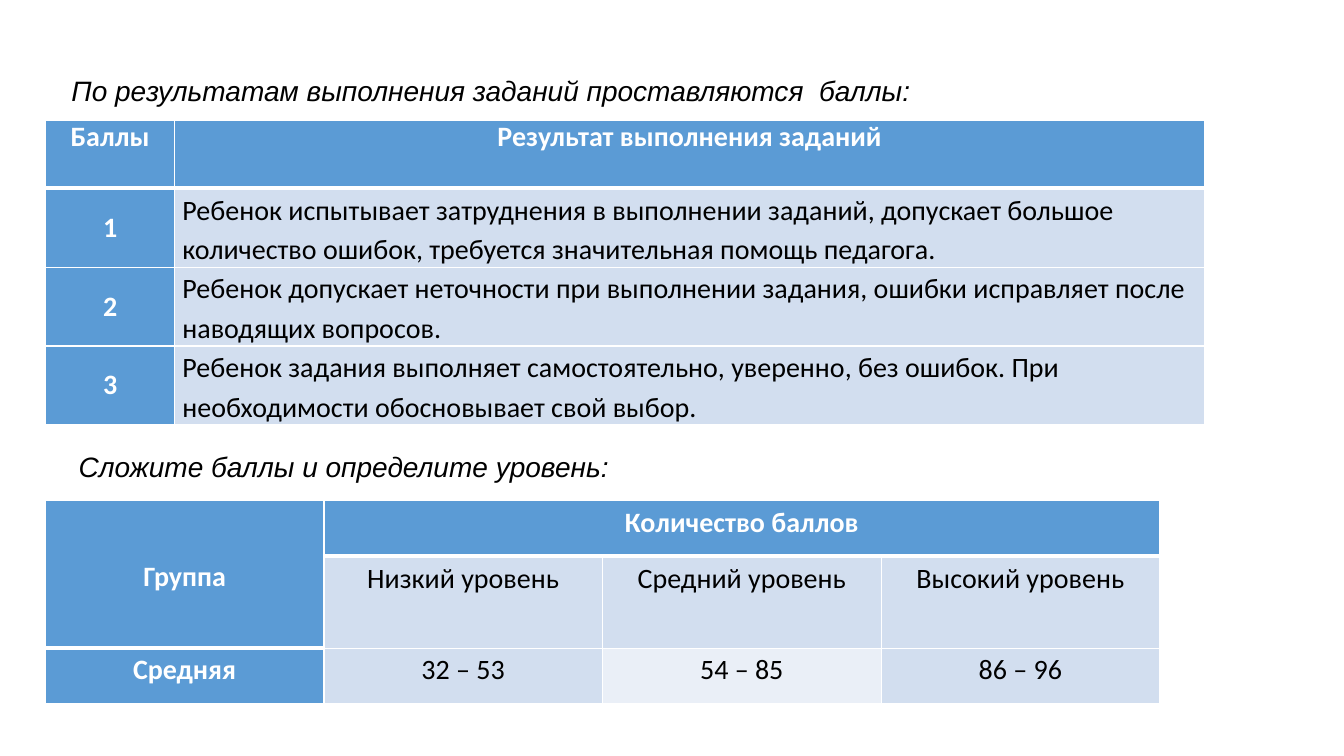
from lxml.etree import SubElement
from pptx import Presentation
from pptx.dml.color import RGBColor
from pptx.enum.text import MSO_ANCHOR as Anchor, PP_ALIGN as Align
from pptx.oxml.ns import qn
from pptx.util import Pt

COLORS = {
    "white": "FFFFFF",
    "black": "000000",
    "header": "5B9BD5",
    "band": "D2DEEF",
    "light": "EAEFF7",
}
THIN, THICK = 1, 3

SCORES = [
    ("Баллы", "Результат выполнения заданий"),
    ("1", "Ребенок испытывает затруднения в выполнении заданий, допускает большое "
          "количество ошибок, требуется значительная помощь педагога."),
    ("2", "Ребенок допускает неточности при выполнении задания, ошибки исправляет "
          "после наводящих вопросов."),
    ("3", "Ребенок задания выполняет самостоятельно, уверенно, без ошибок. При "
          "необходимости обосновывает свой выбор."),
]
LEVELS = [
    ("Группа", "Количество баллов", "", ""),
    ("", "Низкий уровень", "Средний уровень", "Высокий уровень"),
    ("Средняя", "32 – 53", "54 – 85", "86 – 96"),
]


def style_font(font, name, color):
    font.name = name
    font.size = Pt(20)
    font.color.rgb = RGBColor.from_string(COLORS[color])


def add_caption(slide, text, left, top, width):
    box = slide.shapes.add_textbox(Pt(left), Pt(top), Pt(width), Pt(32))
    box.text_frame.word_wrap = True
    paragraph = box.text_frame.paragraphs[0]
    paragraph.text = text
    style_font(paragraph.font, "Arial", "black")
    paragraph.font.italic = True


def set_borders(cell, top, bottom):
    properties = cell._tc.get_or_add_tcPr()
    widths = {"a:lnL": THIN, "a:lnR": THIN, "a:lnT": top, "a:lnB": bottom}
    for tag, width in widths.items():
        line = SubElement(properties, qn(tag), w=str(Pt(width)))
        fill = SubElement(line, qn("a:solidFill"))
        SubElement(fill, qn("a:srgbClr"), val=COLORS["white"])


def fill_cell(cell, text, fill, top=THIN, bottom=THIN,
              align=Align.CENTER, anchor=Anchor.TOP, spacing=1.15):
    is_header = fill == "header"
    cell.margin_left = cell.margin_right = Pt(5.4)
    cell.margin_top = cell.margin_bottom = Pt(0)
    cell.vertical_anchor = anchor
    set_borders(cell, top, bottom)
    cell.fill.solid()
    cell.fill.fore_color.rgb = RGBColor.from_string(COLORS[fill])
    paragraph = cell.text_frame.paragraphs[0]
    paragraph.text = text
    paragraph.alignment = align
    paragraph.line_spacing = spacing
    style_font(paragraph.font, "Calibri", "white" if is_header else "black")
    paragraph.font.bold = is_header


def add_grid(slide, top, widths, heights):
    frame = slide.shapes.add_table(len(heights), len(widths), Pt(32.4), Pt(top),
                                   Pt(sum(widths)), Pt(sum(heights)))
    table = frame.table
    for column, width in zip(table.columns, widths):
        column.width = Pt(width)
    for row, height in zip(table.rows, heights):
        row.height = Pt(height)
    return table


def add_scores(slide):
    table = add_grid(slide, 85.7, [92.5, 735.5], [48.8] + [56.2] * 3)
    for row, texts in enumerate(SCORES):
        for column, text in enumerate(texts):
            is_result = row > 0 and column == 1
            fill_cell(
                table.cell(row, column), text,
                "band" if is_result else "header",
                top=THICK if row == 1 else THIN,
                bottom=THICK if row == 0 else THIN,
                align=Align.LEFT if is_result else Align.CENTER,
                anchor=Anchor.MIDDLE if row and column == 0 else Anchor.TOP,
                spacing=1.15 if is_result else 1.0,
            )


def add_levels(slide):
    table = add_grid(slide, 357.8, [199] * 4, [39.5, 65.7, 39.8])
    table.cell(0, 0).merge(table.cell(1, 0))
    table.cell(0, 1).merge(table.cell(0, 3))
    for row, texts in enumerate(LEVELS):
        for column, text in enumerate(texts):
            is_header = row == 0 or column == 0
            plain = "light" if (row, column) == (2, 2) else "band"
            header_end = 1 if column == 0 else 0
            fill_cell(
                table.cell(row, column), text,
                "header" if is_header else plain,
                top=THICK if row == header_end + 1 else THIN,
                bottom=THICK if row in (0, header_end) else THIN,
                anchor=Anchor.MIDDLE if text == "Группа" else Anchor.TOP,
            )


def main():
    presentation = Presentation()
    presentation.slide_width = Pt(960)
    presentation.slide_height = Pt(540)
    slide = presentation.slides.add_slide(presentation.slide_layouts[6])
    add_scores(slide)
    add_caption(slide, "По результатам выполнения заданий проставляются  баллы:",
                44, 49, 640)
    add_caption(slide, "Сложите баллы и определите уровень:", 49, 317.5, 480)
    add_levels(slide)
    presentation.save("out.pptx")


if __name__ == "__main__":
    main()
